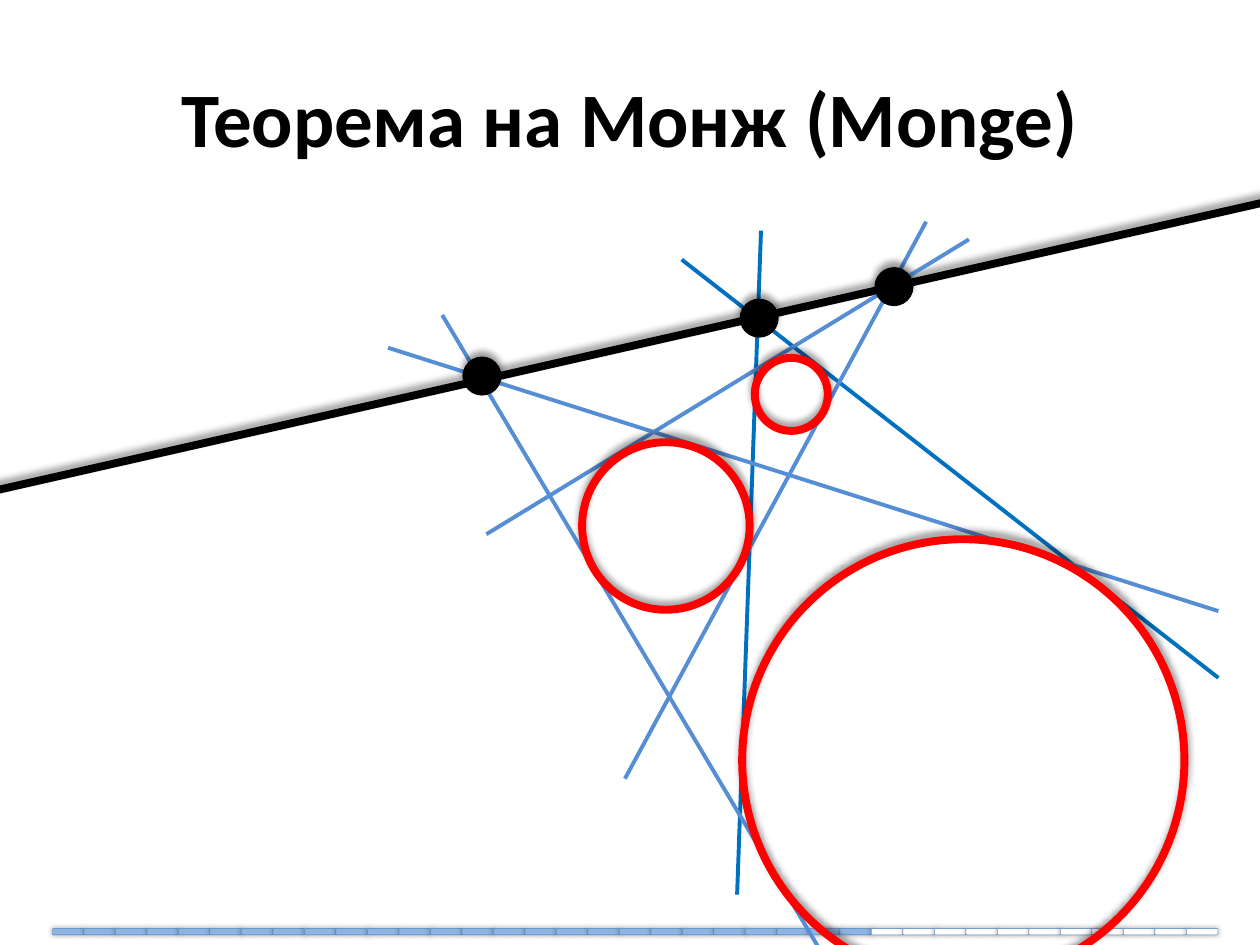
from lxml.etree import SubElement
from pptx import Presentation
from pptx.dml.color import RGBColor
from pptx.enum.shapes import MSO_CONNECTOR, MSO_SHAPE
from pptx.enum.text import MSO_ANCHOR, PP_ALIGN
from pptx.oxml.ns import qn
from pptx.util import Pt

BLACK = RGBColor(0x00, 0x00, 0x00)
WHITE = RGBColor(0xFF, 0xFF, 0xFF)
RED = RGBColor(0xFF, 0x00, 0x00)
DARK_BLUE = RGBColor(0x00, 0x70, 0xC0)
LIGHT_BLUE = RGBColor(0x55, 0x8E, 0xD5)
BAR_FILL = RGBColor(0x8E, 0xB4, 0xE3)
BAR_LINE = RGBColor(0x4B, 0x7E, 0xBC)

# Shadows: opacity in percent, blur and distance in points, direction in degrees
BAR_SHADOW = (38, 3.1, 0, 90)
FIGURE_SHADOW = (40, 4, 3, 270)

STEPS, STEPS_DONE = 37, 26

# Centre x, centre y, radius
BIG_CIRCLE = (550.44, 434.52, 126.36)
MIDDLE_CIRCLE = (380.52, 300.6, 47.88)
SMALL_CIRCLE = (452.16, 225.36, 20.88)

# Intersections of the tangent pairs
POINT_RADIUS = 11.16
BIG_SMALL_POINT = (433.8, 181.8)
BIG_MIDDLE_POINT = (275.4, 214.92)
MIDDLE_SMALL_POINT = (510.84, 163.8)

# Start x, start y, end x, end y
MONGE_LINE = (-14.4, 282.96, 756, 108)
BIG_SMALL_TANGENTS = [
    (696.24, 387.36, 389.52, 148.32),
    (421.2, 511.2, 434.88, 131.76),
]
OTHER_TANGENTS = [
    (489.6, 578.16, 252.72, 180),
    (696.24, 349.2, 221.76, 198.72),
    (357.12, 444.96, 529.2, 126.72),
    (277.92, 305.28, 553.68, 136.8),
]


def set_shadow(effects, shadow):
    opacity, blur, distance, direction = shadow
    outer = SubElement(effects, qn("a:outerShdw"), blurRad=str(Pt(blur)),
                       dist=str(Pt(distance)), dir=str(direction * 60000),
                       rotWithShape="0")
    color = SubElement(outer, qn("a:srgbClr"), val=str(BLACK))
    SubElement(color, qn("a:alpha"), val=str(opacity * 1000))


def add_figure(shapes, preset, box, shadow, fill=None, line=None, width=0):
    figure = shapes.add_shape(preset, *map(Pt, box))
    if fill is None:
        figure.fill.background()
    else:
        figure.fill.solid()
        figure.fill.fore_color.rgb = fill
    if line is None:
        figure.line.fill.background()
    else:
        figure.line.color.rgb = line
        figure.line.width = Pt(width)
    figure.shadow.inherit = False
    set_shadow(figure._element.spPr.find(qn("a:effectLst")), shadow)


def add_disc(shapes, x, y, radius, **style):
    box = (x - radius, y - radius, 2 * radius, 2 * radius)
    add_figure(shapes, MSO_SHAPE.OVAL, box, FIGURE_SHADOW, **style)


def add_line(shapes, ends, color, width=2.25, shadow=None):
    line = shapes.add_connector(MSO_CONNECTOR.STRAIGHT, *map(Pt, ends))
    line.line.color.rgb = color
    line.line.width = Pt(width)
    effects = SubElement(line._element.spPr, qn("a:effectLst"))
    if shadow:
        set_shadow(effects, shadow)


def add_progress_bar(shapes):
    bar = shapes.add_group_shape()
    for step in range(STEPS):
        add_figure(bar.shapes, MSO_SHAPE.ROUNDED_RECTANGLE,
                   (30 + 18 * step, 530.6, 18, 3.6), BAR_SHADOW,
                   fill=BAR_FILL if step < STEPS_DONE else WHITE,
                   line=BAR_LINE, width=0.25)


def add_title(shapes, text):
    title = shapes.add_textbox(Pt(36), Pt(21.6), Pt(648), Pt(90))
    frame = title.text_frame
    frame.word_wrap = True
    frame.vertical_anchor = MSO_ANCHOR.MIDDLE
    paragraph = frame.paragraphs[0]
    paragraph.text = text
    paragraph.alignment = PP_ALIGN.CENTER
    paragraph.font.name = "Calibri"
    paragraph.font.size = Pt(44)
    paragraph.font.bold = True
    paragraph.font.color.rgb = BLACK


def main():
    presentation = Presentation()
    presentation.slide_width, presentation.slide_height = Pt(720), Pt(540)
    slide = presentation.slides.add_slide(presentation.slide_layouts[6])
    shapes = slide.shapes

    add_progress_bar(shapes)
    add_title(shapes, "Теорема на Монж (Monge)")

    # Tangents to the big and small circles, and the line through the points
    for tangent in BIG_SMALL_TANGENTS:
        add_line(shapes, tangent, DARK_BLUE)
    add_disc(shapes, *BIG_SMALL_POINT, POINT_RADIUS, fill=BLACK)
    add_line(shapes, MONGE_LINE, BLACK, 4.5, FIGURE_SHADOW)

    # Remaining tangents, circles and points
    for tangent in OTHER_TANGENTS:
        add_line(shapes, tangent, LIGHT_BLUE)
    for circle in (BIG_CIRCLE, MIDDLE_CIRCLE, SMALL_CIRCLE):
        add_disc(shapes, *circle, line=RED, width=4.5)
    for point in (BIG_MIDDLE_POINT, MIDDLE_SMALL_POINT):
        add_disc(shapes, *point, POINT_RADIUS, fill=BLACK)

    presentation.save("out.pptx")


if __name__ == "__main__":
    main()
